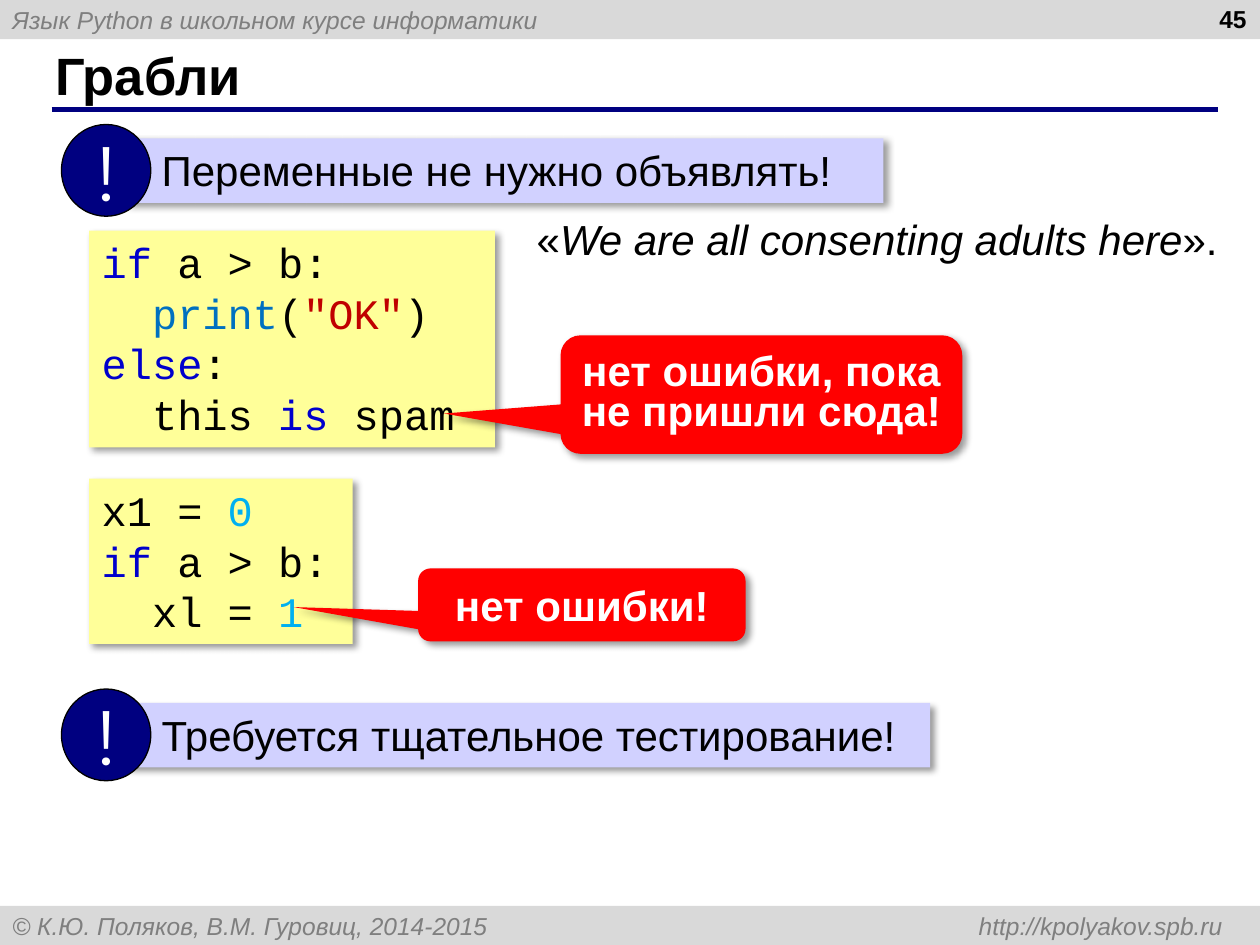
"""Build a slide on the pitfalls of undeclared variables in Python."""
import pptx
import pptx.util
import pptx.dml.color
import pptx.enum.shapes
import pptx.enum.text
import pptx.oxml
import pptx.oxml.ns
import lxml.etree

Cm, Pt = pptx.util.Cm, pptx.util.Pt
RGB = pptx.dml.color.RGBColor
Shape = pptx.enum.shapes.MSO_SHAPE
Align = pptx.enum.text.PP_ALIGN
Anchor = pptx.enum.text.MSO_ANCHOR
qn = pptx.oxml.ns.qn

BLACK = RGB(0, 0, 0)
WHITE = RGB(255, 255, 255)
GREY = RGB(0xD9, 0xD9, 0xD9)
DIM = RGB(0x7F, 0x7F, 0x7F)
NAVY = RGB(0, 0, 0x80)
LILAC = RGB(0xD1, 0xD1, 0xFF)
CREAM = RGB(0xFF, 0xFF, 0x99)
RED = RGB(0xFF, 0, 0)
KEY = RGB(0, 0, 0xCC)
CALL = RGB(0, 0x70, 0xC0)
QUOTE = RGB(0xC0, 0, 0)
DIGIT = RGB(0, 0xB0, 0xF0)

BODY = {"name": "Arial", "size": Pt(24)}
CODE = {"name": "Courier New", "size": Pt(24)}
STRONG = {**BODY, "bold": True}
HEAD = {**STRONG, "size": Pt(30)}
PAGE = {**STRONG, "size": Pt(14)}
SMALL = {"name": "Arial", "size": Pt(14), "italic": True}
MARK = {"name": "Montserrat", "size": Pt(44)}
MIDDLE = {"vertical_anchor": Anchor.MIDDLE}


def apply(item, form):
    """Set every attribute that the format names."""
    for name, value in form.items():
        setattr(item, name, value)


class Deck:
    """Holds the style and the current slide."""

    def __init__(self):
        self.show = pptx.Presentation()
        self.show.slide_width, self.show.slide_height = Cm(25.4), Cm(19.05)
        self.slide = self.show.slides.add_slide(self.show.slide_layouts[5])

    def label(self, shape, lines, font, color=BLACK, frame=None, para=None):
        """Fill a shape with lines of (text, changes) runs."""
        body = shape.text_frame
        apply(body, {"word_wrap": True, "vertical_anchor": Anchor.TOP, **(frame or {})})
        for i, line in enumerate(lines):
            part = body.add_paragraph() if i else body.paragraphs[0]
            apply(part, {"alignment": Align.LEFT, **(para or {})})
            for text, form in line:
                form = {**font, "color": color, **form}
                run = part.add_run()
                run.text = text
                run.font.color.rgb = form.pop("color")
                apply(run.font, form)

    def box(self, kind, at, fill, home=None, glow=False):
        """Add a plain filled shape, with a soft shadow if asked."""
        shape = (home or self.slide).shapes.add_shape(kind, *map(Cm, at))
        shape.fill.solid()
        shape.fill.fore_color.rgb = fill
        shape.line.fill.background()
        shape.shadow.inherit = False
        if glow:
            shade = lxml.etree.SubElement(
                shape.element.spPr.find(qn("a:effectLst")), qn("a:outerShdw"),
                blurRad=str(Pt(4)), dist=str(Pt(3)), dir="2700000",
                algn="tl", rotWithShape="0")
            tint = lxml.etree.SubElement(shade, qn("a:srgbClr"), val="000000")
            lxml.etree.SubElement(tint, qn("a:alpha"), val="40000")
        return shape

    def bar(self, top, text):
        """Add a grey strip across the slide with a right tab stop."""
        shape = self.box(Shape.RECTANGLE, (0, top, 25.4, 0.79), GREY)
        self.label(shape, [[(text, {})]], SMALL, DIM, MIDDLE)
        props = shape.text_frame.paragraphs[0]._p.get_or_add_pPr()
        tabs = lxml.etree.SubElement(props, qn("a:tabLst"))
        lxml.etree.SubElement(tabs, qn("a:tab"), pos=str(Cm(24.4)), algn="r")

    def title(self, text):
        """Place the title and the rule under it."""
        shape = self.slide.shapes.title
        apply(shape, dict(zip(("left", "top", "width", "height"),
                              map(Cm, (0.86, 0.84, 23.27, 1.32)))))
        self.label(shape, [[(text, {})]], HEAD, frame=MIDDLE)
        rule = self.slide.shapes.add_connector(
            pptx.enum.shapes.MSO_CONNECTOR.STRAIGHT,
            *map(Cm, (1.04, 2.21, 24.56, 2.21)))
        rule.line.color.rgb = NAVY
        rule.line.width = Pt(3)
        lxml.etree.SubElement(rule._element.spPr, qn("a:effectLst"))

    def text(self, at, runs, font, **style):
        """Add a free line of text."""
        shape = self.slide.shapes.add_textbox(*map(Cm, at))
        self.label(shape, [runs], font, **style)

    def note(self, top, width, text):
        """Add a lilac strip with a round exclamation badge."""
        group = self.slide.shapes.add_group_shape()
        strip = self.box(Shape.RECTANGLE, (2.54, top, width, 1.3), LILAC, group, True)
        self.label(strip, [[(text, {})]], BODY, frame={"margin_left": Cm(0.72)})
        badge = self.box(Shape.OVAL, (1.24, top - 0.28, 1.8, 1.85), NAVY, group)
        badge.line.color.rgb = BLACK
        badge.line.width = Pt(0.75)
        self.label(badge, [[("!", {})]], MARK, WHITE,
                   {**MIDDLE, "word_wrap": False}, {"alignment": Align.CENTER})

    def code(self, at, *lines):
        """Add a code listing; plain strings are black."""
        shape = self.box(Shape.RECTANGLE, at, CREAM, glow=True)
        rows = [[(run, {}) if isinstance(run, str) else (run[0], {"color": run[1]})
                 for run in line] for line in lines]
        self.label(shape, rows, CODE)

    def callout(self, at, tip, text, gap=1.0):
        """Add a red callout that points at the tip."""
        shape = self.box(Shape.ROUNDED_RECTANGULAR_CALLOUT, at, RED, glow=True)
        for i, value in enumerate((*tip, 0.17)):
            shape.adjustments[i] = value
        self.label(shape, [[(text, {})]], STRONG, WHITE, MIDDLE,
                   {"alignment": Align.CENTER, "line_spacing": gap})


def main():
    """Draw the slide and save it."""
    deck = Deck()
    deck.bar(0, "Язык Python в школьном курсе информатики")
    deck.bar(18.26, "© К.Ю. Поляков, В.М. Гуровиц, 2014-2015 \thttp://kpolyakov.spb.ru")
    deck.title("Грабли")
    deck.text((19.46, -0.05, 5.92, 1.32), [("45", {})], PAGE,
              para={"alignment": Align.RIGHT})
    deck.note(2.79, 15.27, "Переменные не нужно объявлять!")
    deck.text((10.57, 4.17, 14.38, 1.27),
              [("«", {}), ("We are all consenting adults here", {"italic": True}),
               ("».", {})], BODY, frame={"word_wrap": False})
    deck.code((1.8, 9.65, 5.31, 3.33),
              ["x1 = ", ("0", DIGIT)],
              [("if", KEY), " a > b:"],
              ["  xl = ", ("1", DIGIT)])
    deck.callout((8.43, 11.46, 6.6, 1.47), (-0.88, 0.03), "нет ошибки!")
    deck.code((1.8, 4.65, 8.18, 4.37),
              [("if", KEY), " a > b:"],
              ["  ", ("print", CALL), "(", ('"OK"', QUOTE), ")"],
              [("else", KEY), ":"],
              ["  this ", ("is", KEY), " spam"])
    deck.callout((11.3, 6.76, 8.1, 2.39), (-0.79, 0.16),
                 "нет ошибки, пока не пришли сюда!", 0.8)
    deck.note(14.17, 16.21, "Требуется тщательное тестирование!")
    deck.show.save("out.pptx")


if __name__ == "__main__":
    main()
